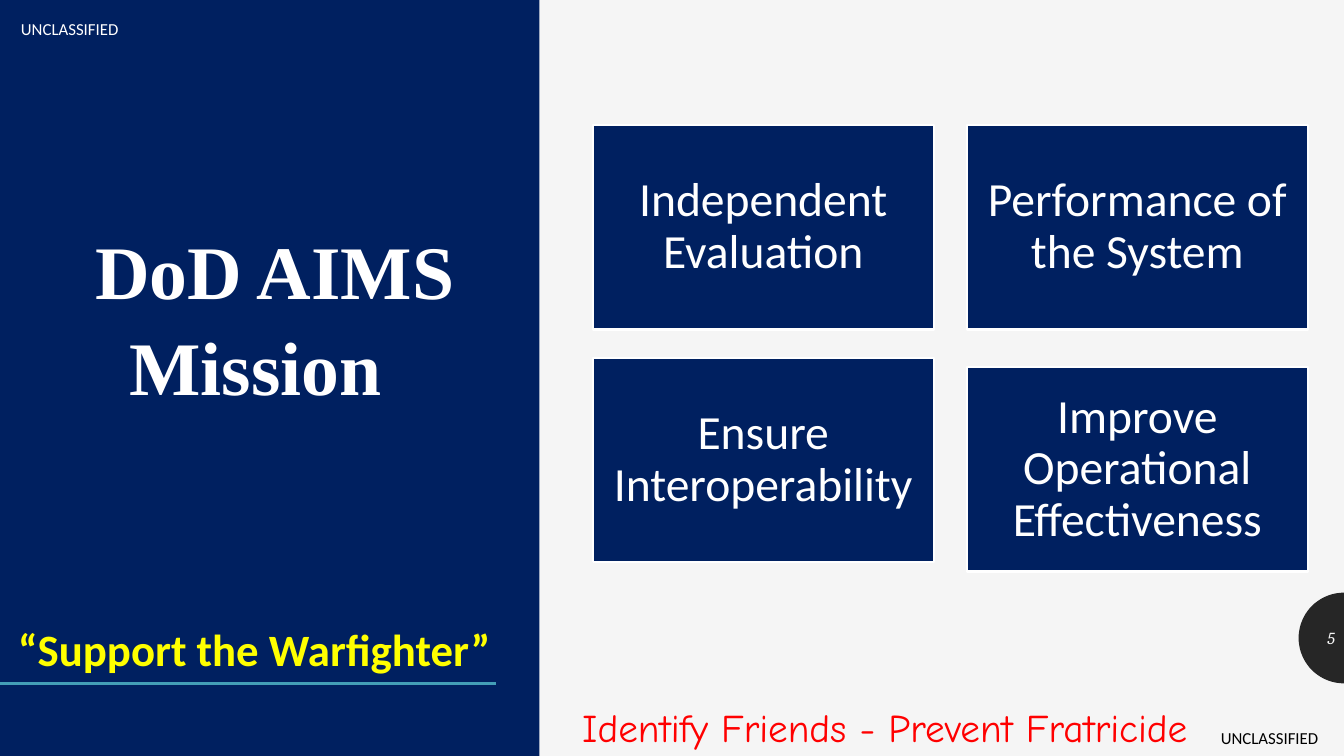
import math
import pptx
import pptx.util
import pptx.dml.color
import pptx.enum.shapes
import pptx.enum.text
import pptx.oxml

Inches = pptx.util.Inches
Pt = pptx.util.Pt
ALIGN = pptx.enum.text.PP_ALIGN
ANCHOR = pptx.enum.text.MSO_ANCHOR
RECT = pptx.enum.shapes.MSO_SHAPE.RECTANGLE
NAVY = "002060"
WHITE = "FFFFFF"
PALE = "F5F5F5"


def color(code):
    return pptx.dml.color.RGBColor.from_string(code)


def write(shape, words, font, size, code, align=ALIGN.CENTER, anchor=ANCHOR.TOP):
    frame = shape.text_frame
    frame.word_wrap = True
    frame.vertical_anchor = anchor
    par = frame.paragraphs[0]
    par.text = words
    par.alignment = align
    par.font.name = font
    par.font.size = Pt(size)
    par.font.color.rgb = color(code)
    return par


deck = pptx.Presentation()
deck.slide_width = Inches(13.33)
deck.slide_height = Inches(7.5)
slide = deck.slides.add_slide(deck.slide_layouts[6])
slide.background.fill.solid()
slide.background.fill.fore_color.rgb = color(PALE)
shapes = slide.shapes

arc = []
for step in range(41):
    turn = math.pi * (0.5 + step / 40)
    arc.append((Inches(13.33 + 0.45 * math.cos(turn)), Inches(6.33 + 0.45 * math.sin(turn))))
form = shapes.build_freeform(*arc[0])
form.add_line_segments(arc[1:], close=True)
badge = form.convert_to_shape()
badge.shadow.inherit = False
badge.fill.solid()
badge.fill.fore_color.rgb = color("262626")
badge.line.fill.background()

panel = shapes.add_shape(RECT, 0, 0, Inches(5.35), Inches(7.5))
panel.shadow.inherit = False
panel.fill.solid()
panel.fill.fore_color.rgb = color(NAVY)
panel.line.fill.background()

rule = shapes.add_connector(
    pptx.enum.shapes.MSO_CONNECTOR.STRAIGHT, 0, Inches(6.78), Inches(4.92), Inches(6.78))
rule.line.color.rgb = color("439EB7")
rule.line.width = Pt(2)
rule._element.spPr.append(pptx.oxml.parse_xml(
    '<a:effectLst xmlns:a="http://schemas.openxmlformats.org/drawingml/2006/main"/>'))

for left, top, code in [(0.11, 0.14, WHITE), (12.01, 7.17, "000000")]:
    box = shapes.add_textbox(Inches(left), Inches(top), Inches(1.32), Inches(0.3))
    write(box, "UNCLASSIFIED", "Calibri", 12, code, ALIGN.LEFT)

box = shapes.add_textbox(Inches(5.67), Inches(6.93), Inches(6.21), Inches(0.57))
write(box, "Identify Friends - Prevent Fratricide", "Comic Neue", 28, "FF0000")

title = shapes.add_textbox(Inches(0.34), Inches(2.13), Inches(4.39), Inches(1.92))
par = write(title, "DoD AIMS Mission", "Times New Roman", 54, WHITE)
par.font.bold = True
par.line_spacing = 1.05
par._p.get_or_add_pPr().set("indent", str(Inches(0.38)))

box = shapes.add_textbox(Inches(12.89), Inches(6.13), Inches(0.45), Inches(0.4))
par = write(box, "5", "Cambria", 12, PALE, ALIGN.RIGHT, ANCHOR.MIDDLE)
par.font.italic = True

goals = [
    (5.88, 1.24, "Independent Evaluation"),
    (9.59, 1.24, "Performance of the System"),
    (5.88, 3.55, "Ensure Interoperability"),
    (9.59, 3.64, "Improve Operational Effectiveness"),
]
for left, top, words in goals:
    card = shapes.add_shape(RECT, Inches(left), Inches(top), Inches(3.38), Inches(2.03))
    card.shadow.inherit = False
    card.fill.solid()
    card.fill.fore_color.rgb = color(NAVY)
    card.line.color.rgb = color(WHITE)
    card.line.width = Pt(1.5)
    frame = card.text_frame
    frame.margin_left = frame.margin_right = Inches(0.14)
    frame.margin_top = frame.margin_bottom = Inches(0.14)
    par = write(card, words, "Calibri", 34, WHITE, anchor=ANCHOR.MIDDLE)
    par.line_spacing = 0.9

box = shapes.add_textbox(Inches(-0.98), Inches(6.12), Inches(7.01), Inches(0.64))
par = write(box, "“Support the Warfighter”", "Calibri", 32, "FFFF00")
par.font.bold = True

deck.save("out.pptx")
